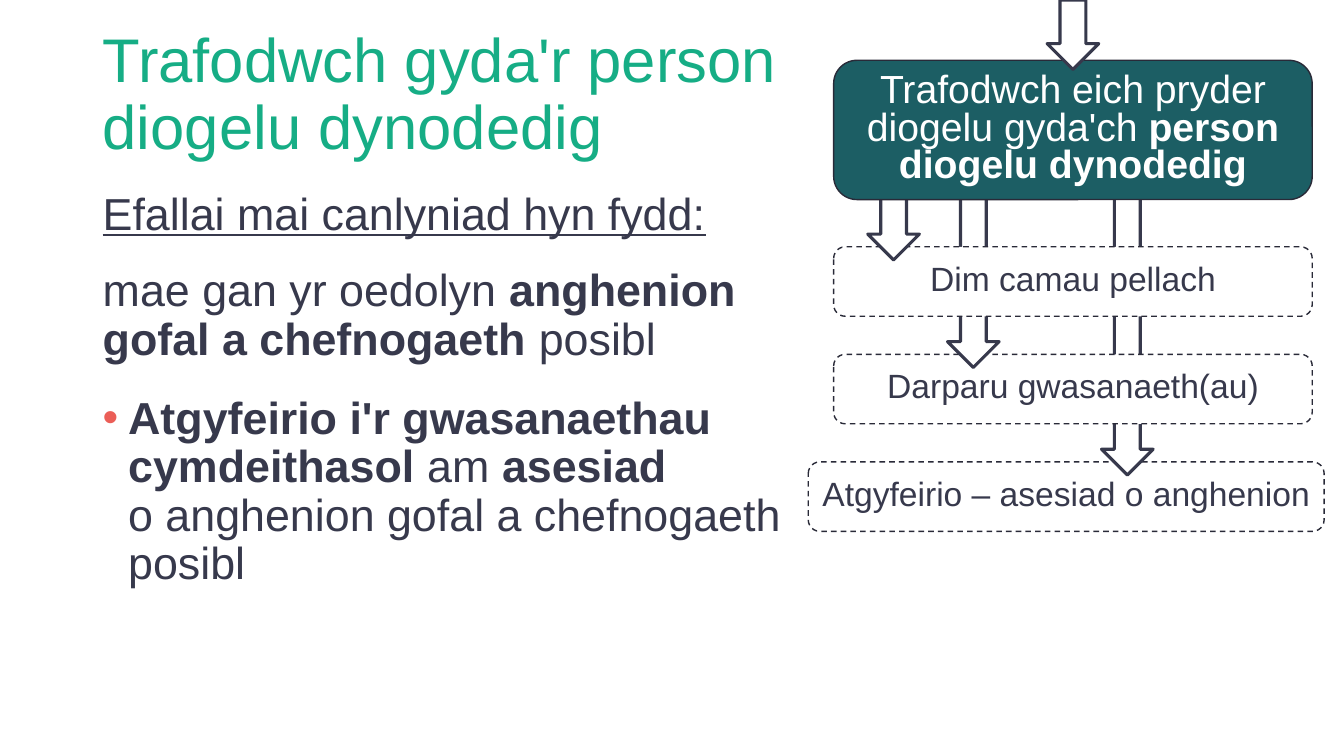
from dataclasses import dataclass

import lxml.etree
import pptx
import pptx.dml.color
import pptx.enum.dml
import pptx.enum.shapes
import pptx.enum.text
import pptx.oxml.ns
import pptx.presentation
import pptx.shapes.autoshape
import pptx.slide
import pptx.text.text
import pptx.util

Cm = pptx.util.Cm
Pt = pptx.util.Pt


@dataclass(frozen=True)
class Theme:
    font: str = "Arial"
    heading: str = "16AD85"
    ink: str = "37394C"
    border: str = "292A38"
    bullet: str = "EB5E57"
    concern: str = "1C5E64"
    white: str = "FFFFFF"
    title_size: int = 44
    body_size: int = 32
    concern_size: int = 28
    outcome_size: int = 24
    border_width: float = 1
    arrow_width: float = 2.25


@dataclass(frozen=True)
class Span:
    text: str
    bold: bool = False
    underline: bool = False
    break_after: bool = False


@dataclass(frozen=True)
class Para:
    spans: tuple[Span, ...]
    bulleted: bool = False


@dataclass(frozen=True)
class Passage:
    top: float
    width: float
    height: float
    paras: tuple[Para, ...]
    size: int
    color: str
    anchor: pptx.enum.text.MSO_ANCHOR = pptx.enum.text.MSO_ANCHOR.TOP
    space_after: int = 12


@dataclass(frozen=True)
class Step:
    left: float
    top: float
    width: float
    height: float
    spans: tuple[Span, ...]
    arrow_left: float
    arrow_top: float
    overlap: float = 0.33
    is_concern: bool = False


THEME = Theme()
TEXT_LEFT = 2.34
ARROW_BREADTH = 1.3
FLOW_LEFT, FLOW_WIDTH = 21.01, 12.06
OUTCOME_TOP, OUTCOME_PITCH, OUTCOME_HEIGHT = 6.22, 2.71, 1.75

PASSAGES = (
    Passage(1.6, 18.31, 1.65,
            (Para((Span("Trafodwch gyda'r person diogelu dynodedig"),)),),
            THEME.title_size, THEME.heading, pptx.enum.text.MSO_ANCHOR.MIDDLE, 0),
    Passage(6.63, 18.59, 8.08, (
        Para((Span("mae gan yr oedolyn "),
              Span("anghenion gofal a chefnogaeth ", bold=True),
              Span("posibl"))),
        Para((Span("Atgyfeirio i'r gwasanaethau cymdeithasol ", bold=True),
              Span("am "),
              Span("asesiad", bold=True, break_after=True),
              Span("o anghenion gofal a chefnogaeth posibl")), bulleted=True),
    ), THEME.body_size, THEME.ink),
    Passage(4.7, 17.42, 1.42,
            (Para((Span("Efallai mai canlyniad hyn fydd:", underline=True),)),),
            THEME.body_size, THEME.ink),
)

STEPS = (
    Step(20.37, OUTCOME_TOP + 2 * OUTCOME_PITCH, 13, OUTCOME_HEIGHT,
         (Span("Atgyfeirio – asesiad o anghenion"),), 27.76, 3.89),
    Step(FLOW_LEFT, OUTCOME_TOP + OUTCOME_PITCH, FLOW_WIDTH, OUTCOME_HEIGHT,
         (Span("Darparu gwasanaeth(au)"),), 23.88, 4.67),
    Step(FLOW_LEFT, OUTCOME_TOP, FLOW_WIDTH, OUTCOME_HEIGHT,
         (Span("Dim camau pellach"),), 21.87, 4.8),
    Step(FLOW_LEFT, 1.52, FLOW_WIDTH, 3.51,
         (Span("Trafodwch eich pryder diogelu gyda'ch "),
          Span("person diogelu dynodedig", bold=True)),
         26.39, 0, overlap=0.23, is_concern=True),
)


def rgb(color: str) -> pptx.dml.color.RGBColor:
    return pptx.dml.color.RGBColor.from_string(color)


def write_spans(paragraph: pptx.text.text._Paragraph, spans: tuple[Span, ...],
                size: int, color: str) -> None:
    for span in spans:
        run = paragraph.add_run()
        run.text = span.text
        run.font.name = THEME.font
        run.font.size = Pt(size)
        run.font.color.rgb = rgb(color)
        run.font.bold = span.bold
        run.font.underline = span.underline
        if span.break_after:
            paragraph.add_line_break()


def add_bullet(paragraph: pptx.text.text._Paragraph) -> None:
    qn = pptx.oxml.ns.qn
    properties = paragraph._p.get_or_add_pPr()
    properties.set("marL", str(Cm(0.64)))
    properties.set("indent", str(Cm(-0.64)))
    bullet_color = lxml.etree.SubElement(properties, qn("a:buClr"))
    lxml.etree.SubElement(bullet_color, qn("a:srgbClr"), val=THEME.bullet)
    lxml.etree.SubElement(properties, qn("a:buFont"), typeface=THEME.font)
    lxml.etree.SubElement(properties, qn("a:buChar"), char="•")


def draw_passage(slide: pptx.slide.Slide, passage: Passage) -> None:
    frame = slide.shapes.add_textbox(
        Cm(TEXT_LEFT), Cm(passage.top), Cm(passage.width), Cm(passage.height)
    ).text_frame
    frame.word_wrap = True
    frame.vertical_anchor = passage.anchor
    for index, para in enumerate(passage.paras):
        paragraph = frame.add_paragraph() if index else frame.paragraphs[0]
        if para.bulleted:
            add_bullet(paragraph)
        paragraph.line_spacing = 0.9
        paragraph.space_before = Pt(10 if index else 0)
        paragraph.space_after = Pt(passage.space_after)
        write_spans(paragraph, para.spans, passage.size, passage.color)


def draw_outline(slide: pptx.slide.Slide, preset: pptx.enum.shapes.MSO_SHAPE,
                 left: float, top: float, width: float, height: float,
                 fill: str, line: str, line_width: float
                 ) -> pptx.shapes.autoshape.Shape:
    shape = slide.shapes.add_shape(preset, Cm(left), Cm(top), Cm(width), Cm(height))
    shape.shadow.inherit = False
    shape.fill.solid()
    shape.fill.fore_color.rgb = rgb(fill)
    shape.line.color.rgb = rgb(line)
    shape.line.width = Pt(line_width)
    return shape


def draw_step(slide: pptx.slide.Slide, step: Step) -> None:
    presets = pptx.enum.shapes.MSO_SHAPE
    box = draw_outline(slide, presets.ROUNDED_RECTANGLE,
                       step.left, step.top, step.width, step.height,
                       THEME.concern if step.is_concern else THEME.white,
                       THEME.border, THEME.border_width)
    if not step.is_concern:
        box.line.dash_style = pptx.enum.dml.MSO_LINE.DASH
    frame = box.text_frame
    frame.word_wrap = True
    frame.vertical_anchor = pptx.enum.text.MSO_ANCHOR.MIDDLE
    paragraph = frame.paragraphs[0]
    paragraph.alignment = pptx.enum.text.PP_ALIGN.CENTER
    paragraph.line_spacing = 0.8
    write_spans(paragraph, step.spans,
                THEME.concern_size if step.is_concern else THEME.outcome_size,
                THEME.white if step.is_concern else THEME.ink)
    draw_outline(slide, presets.DOWN_ARROW, step.arrow_left, step.arrow_top,
                 ARROW_BREADTH, step.top + step.overlap - step.arrow_top,
                 THEME.white, THEME.ink, THEME.arrow_width)


def main() -> None:
    presentation = pptx.Presentation()
    presentation.slide_width = Cm(33.87)
    presentation.slide_height = Cm(19.05)
    slide = presentation.slides.add_slide(presentation.slide_layouts[6])
    for passage in PASSAGES:
        draw_passage(slide, passage)
    for step in STEPS:
        draw_step(slide, step)
    presentation.save("out.pptx")


if __name__ == "__main__":
    main()
